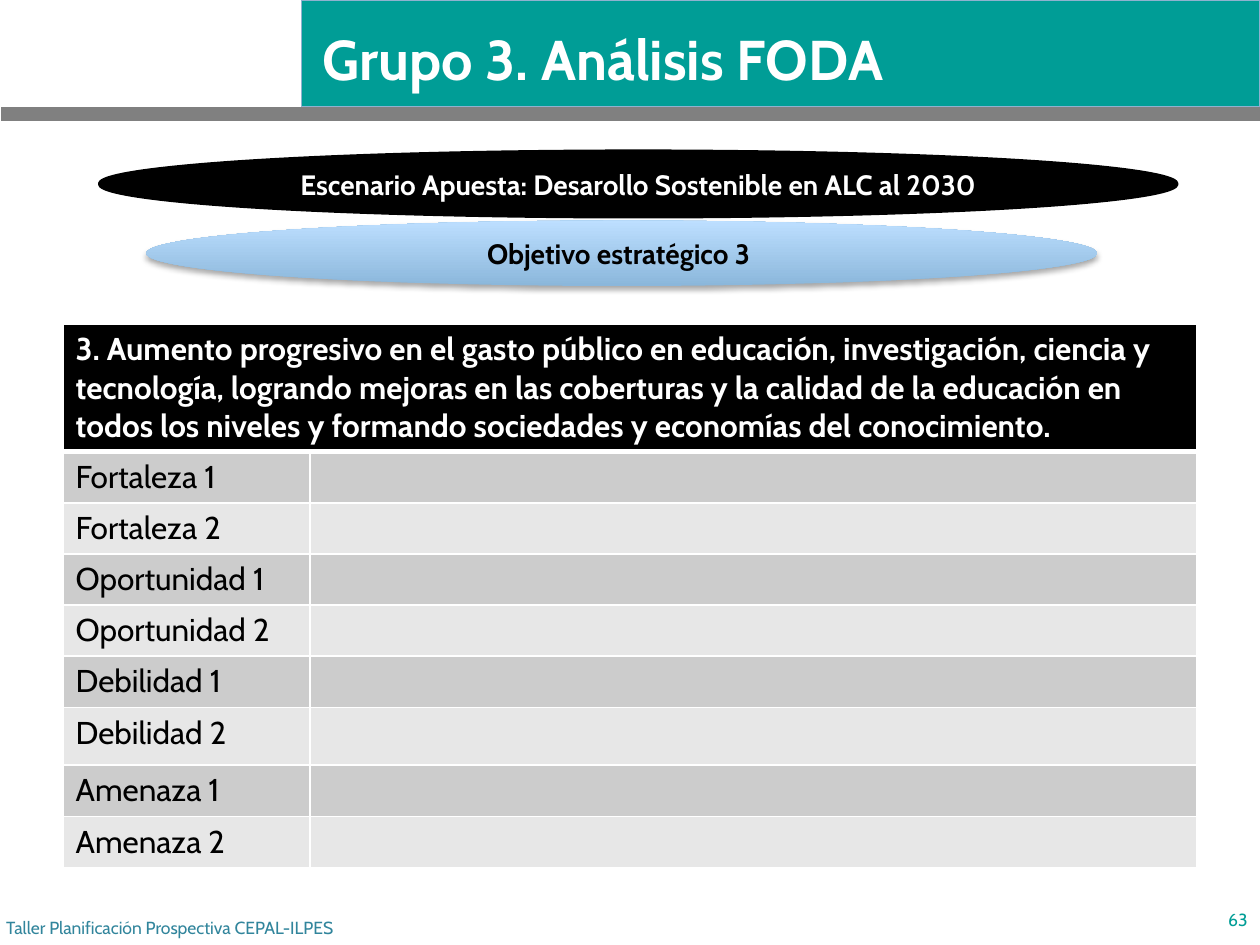
from lxml import etree
from pptx import Presentation
from pptx import util as u
from pptx.dml.color import RGBColor
from pptx.enum import shapes, text
from pptx.oxml.ns import qn

Inches, Pt = u.Inches, u.Pt
TEAL, BLACK, WHITE = "009D96", "000000", "FFFFFF"


def color(value):
    return RGBColor.from_string(value)


def write(frame, words, size, value, bold=False, align=text.PP_ALIGN.LEFT):
    frame.text = words
    para = frame.paragraphs[0]
    para.alignment = align
    font = para.runs[0].font
    font.name, font.size, font.bold = "Cabin", Pt(size), bold
    font.color.rgb = color(value)


deck = Presentation()
deck.slide_width, deck.slide_height = Inches(10), Inches(7.5)
page = deck.slides.add_slide(deck.slide_layouts[5])

# Header bands, placed behind the title
bands = [(2.39, 0, 7.61, 0.85, TEAL), (0.01, 0.85, 10, 0.11, "808080")]
for order, (*place, fill) in enumerate(bands):
    band = page.shapes.add_shape(shapes.MSO_SHAPE.RECTANGLE, *map(Inches, place))
    band.shadow.inherit = False
    band.fill.solid()
    band.fill.fore_color.rgb = color(fill)
    if fill == TEAL:
        band.line.color.rgb = color("8FB2CF")
        band.line.width = Pt(0.75)
    else:
        band.line.fill.background()
    page.shapes._spTree.insert(2 + order, band._element)

# Title
title = page.shapes.title
title.left, title.top = Inches(2.46), Inches(-0.04)
title.width, title.height = Inches(7.41), Inches(1)
title.text_frame.vertical_anchor = text.MSO_ANCHOR.MIDDLE
title.text_frame.auto_size = text.MSO_AUTO_SIZE.NONE
write(title.text_frame, "Grupo 3. Análisis FODA", 32, WHITE, True)

# SWOT table
goal = ("3. Aumento progresivo en el gasto público en educación, investigación, "
        "ciencia y tecnología, logrando mejoras en las coberturas y la calidad de "
        "la educación en todos los niveles y formando sociedades y economías del "
        "conocimiento.")
labels = [f"{factor} {number}"
          for factor in ("Fortaleza", "Oportunidad", "Debilidad", "Amenaza")
          for number in (1, 2)]
table = page.shapes.add_table(
    len(labels) + 1, 2, Inches(0.5), Inches(2.57), Inches(9), Inches(4.3)).table
table.columns[0].width, table.columns[1].width = Inches(1.96), Inches(7.04)
for index, row in enumerate(table.rows):
    header = index == 0
    row.height = Inches(1 if header else 0.46 if index == 6 else 0.405)
    for cell in row.cells:
        cell.fill.solid()
        cell.fill.fore_color.rgb = color(
            BLACK if header else "CCCCCC" if index % 2 else "E7E7E7")
        # Borders come before the fill in the cell properties
        properties = cell._tc.get_or_add_tcPr()
        for place, side in enumerate(("lnL", "lnR", "lnT", "lnB")):
            thick = (header and side == "lnB") or (index == 1 and side == "lnT")
            border = etree.Element(qn(f"a:{side}"), w=str(Pt(3 if thick else 1)))
            solid = etree.SubElement(border, qn("a:solidFill"))
            etree.SubElement(solid, qn("a:srgbClr"), val=WHITE)
            properties.insert(place, border)
    if header:
        write(row.cells[0].text_frame, goal, 18, WHITE, True)
    else:
        write(row.cells[0].text_frame, labels[index - 1], 18, BLACK)
table.cell(0, 0).merge(table.cell(0, 1))

# Footer and page number
footers = [
    (-0.05, 7.16, 5.98, "Taller Planificación Prospectiva CEPAL-ILPES", "31859C",
     text.PP_ALIGN.LEFT),
    (9.5, 7.1, 0.5, "63", TEAL, text.PP_ALIGN.RIGHT),
]
for left, top, width, words, value, align in footers:
    box = page.shapes.add_textbox(
        Inches(left), Inches(top), Inches(width), Inches(0.4))
    box.text_frame.word_wrap = True
    box.text_frame.vertical_anchor = text.MSO_ANCHOR.MIDDLE
    write(box.text_frame, words, 10, value, align=align)

# Scenario and objective ellipses
ellipses = [
    (0.79, 1.2, 8.55, "Escenario Apuesta: Desarollo Sostenible en ALC al 2030", WHITE),
    (1.16, 1.75, 7.55, "Objetivo estratégico 3 ", BLACK),
]
for left, top, width, words, value in ellipses:
    ellipse = page.shapes.add_shape(
        shapes.MSO_SHAPE.OVAL, Inches(left), Inches(top), Inches(width), Inches(0.52))
    ellipse.shadow.inherit = False
    ellipse.text_frame.word_wrap = True
    ellipse.text_frame.auto_size = text.MSO_AUTO_SIZE.SHAPE_TO_FIT_TEXT
    write(ellipse.text_frame, words, 16, value, True, text.PP_ALIGN.CENTER)
    if value == WHITE:
        ellipse.fill.solid()
        ellipse.fill.fore_color.rgb = color(BLACK)
        ellipse.line.color.rgb = color(BLACK)
        ellipse.line.width = Pt(2)
    else:
        ellipse.line.fill.background()
        ellipse.fill.gradient()
        ellipse.fill.gradient_angle = 90
        for stop, position, shade in zip(
                ellipse.fill.gradient_stops, (0, 1), ("8BB7DB", "BDDFFF")):
            stop.position = position
            stop.color.rgb = color(shade)
        # Soft shadow straight below
        effects = ellipse._element.spPr.find(qn("a:effectLst"))
        shadow = etree.SubElement(
            effects, qn("a:outerShdw"), blurRad=str(Pt(3.1)), dist=str(Pt(1.8)),
            dir="5400000", rotWithShape="0")
        tint = etree.SubElement(shadow, qn("a:srgbClr"), val=BLACK)
        etree.SubElement(tint, qn("a:alpha"), val="35000")

deck.save("out.pptx")
